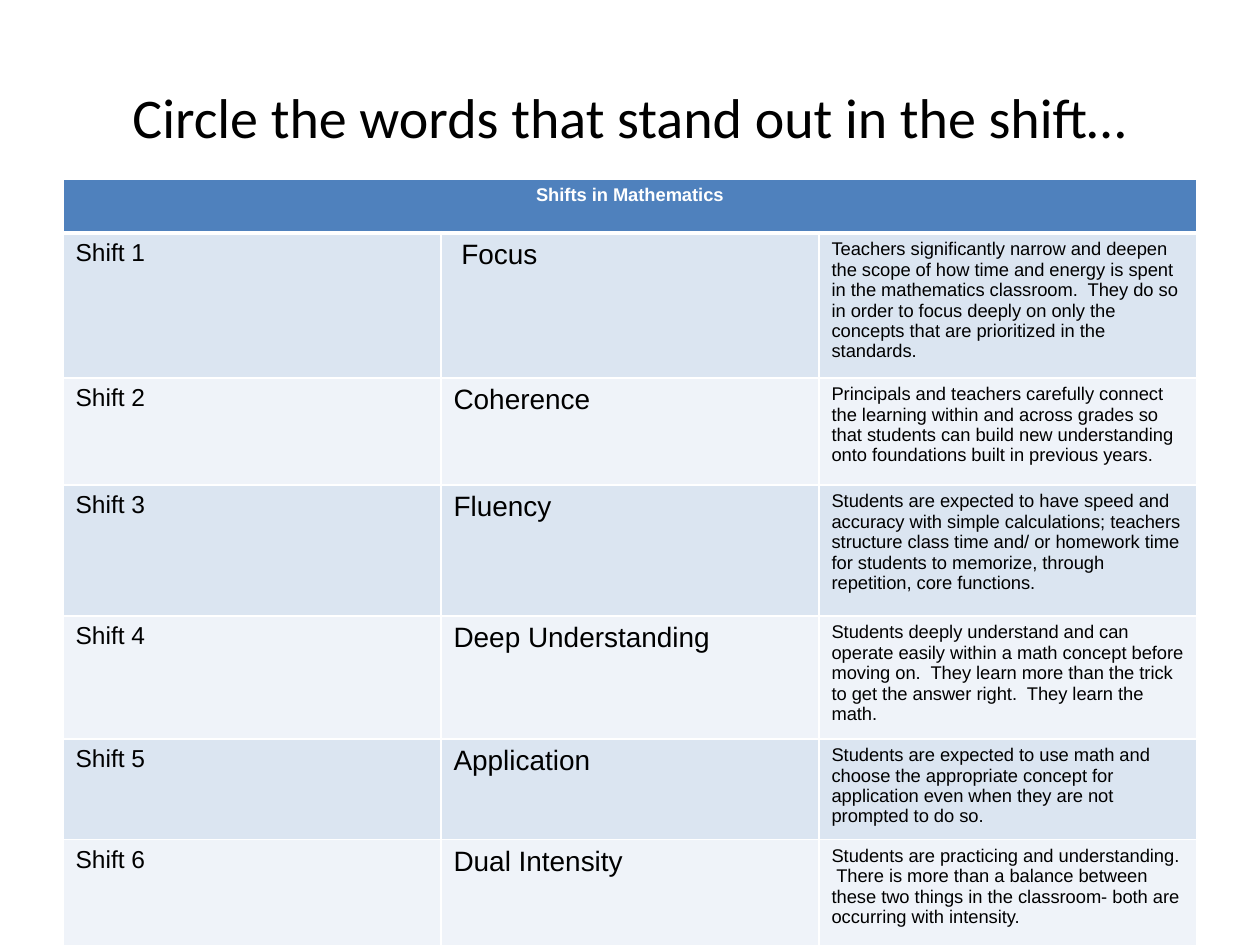
import pptx
import pptx.dml.color
import pptx.enum.text
import pptx.oxml
import pptx.oxml.ns
import pptx.util

Inches, Pt = pptx.util.Inches, pptx.util.Pt
RGBColor = pptx.dml.color.RGBColor
PP_ALIGN = pptx.enum.text.PP_ALIGN
MSO_ANCHOR = pptx.enum.text.MSO_ANCHOR

# Content
TITLE = "Circle the words that stand out in the shift…"
HEADER = "Shifts in Mathematics"
SHIFTS = [
    (" Focus", "Teachers significantly narrow and deepen the scope of how time and energy is "
     "spent in the mathematics classroom.  They do so in order to focus deeply on only the "
     "concepts that are prioritized in the standards."),
    ("Coherence", "Principals and teachers carefully connect the learning within and across "
     "grades so that students can build new understanding onto foundations built in "
     "previous years."),
    ("Fluency", "Students are expected to have speed and accuracy with simple calculations; "
     "teachers structure class time and/ or homework time for students to memorize, "
     "through repetition, core functions."),
    ("Deep Understanding", "Students deeply understand and can operate easily within a math "
     "concept before moving on.  They learn more than the trick to get the answer right.  "
     "They learn the math."),
    ("Application", "Students are expected to use math and choose the appropriate concept "
     "for application even when they are not prompted to do so."),
    ("Dual Intensity", "Students are practicing and understanding.  There is more than a "
     "balance between these two things in the classroom- both are occurring with intensity."),
]
ROW_HEIGHTS = [0.43, 1.04, 0.85, 1.04, 0.85, 0.66, 0.85]
COL_WIDTH = 3

# Colours and text formats
BLACK = RGBColor(0x00, 0x00, 0x00)
WHITE = RGBColor(0xFF, 0xFF, 0xFF)
BLUE = RGBColor(0x4F, 0x81, 0xBD)
BANDS = [RGBColor(0xDB, 0xE5, 0xF1), RGBColor(0xEF, 0xF3, 0xF9)]

TITLE_FONT = {"name": "Calibri", "size": Pt(32), "bold": False}
HEADER_FONT = {"name": "Arial", "size": Pt(10.5), "bold": True}
COL_FONTS = [{"name": "Arial", "size": Pt(size), "bold": False} for size in (14, 16, 10.5)]


def write(tf, text, font, color, align=PP_ALIGN.LEFT):
    p = tf.paragraphs[0]
    p.alignment = align
    r = p.add_run()
    r.text = text
    for name, value in font.items():
        setattr(r.font, name, value)
    r.font.color.rgb = color


def set_borders(cell, top=1, bottom=1):
    tc_pr = cell._tc.get_or_add_tcPr()
    widths = {"lnL": 1, "lnR": 1, "lnT": top, "lnB": bottom}
    for i, (tag, width) in enumerate(widths.items()):
        tc_pr.insert(i, pptx.oxml.parse_xml(
            f'<a:{tag} {pptx.oxml.ns.nsdecls("a")} w="{Pt(width)}">'
            f'<a:solidFill><a:srgbClr val="{WHITE}"/></a:solidFill></a:{tag}>'))


prs = pptx.Presentation()
prs.slide_width, prs.slide_height = Inches(10), Inches(7.5)
s = prs.slides.add_slide(prs.slide_layouts[6])

# Title
sp = s.shapes.add_textbox(Inches(0.5), Inches(0.3), Inches(9), Inches(1.25))
tf = sp.text_frame
tf.word_wrap = True
tf.vertical_anchor = MSO_ANCHOR.MIDDLE
write(tf, TITLE, TITLE_FONT, BLACK, PP_ALIGN.CENTER)

# Table grid
n_cols = len(COL_FONTS)
table = s.shapes.add_table(len(ROW_HEIGHTS), n_cols, Inches(0.5), Inches(1.42),
                           Inches(COL_WIDTH * n_cols), Inches(sum(ROW_HEIGHTS))).table
for col in table.columns:
    col.width = Inches(COL_WIDTH)
for row, height in zip(table.rows, ROW_HEIGHTS):
    row.height = Inches(height)

# Header row
for cell in table.rows[0].cells:
    cell.fill.solid()
    cell.fill.fore_color.rgb = BLUE
    set_borders(cell, bottom=3)
header = table.cell(0, 0)
header.merge(table.cell(0, n_cols - 1))
write(header.text_frame, HEADER, HEADER_FONT, WHITE, PP_ALIGN.CENTER)

# Shift rows
for i, shift in enumerate(SHIFTS, start=1):
    for j, text in enumerate((f"Shift {i}", *shift)):
        cell = table.cell(i, j)
        cell.fill.solid()
        cell.fill.fore_color.rgb = BANDS[(i - 1) % 2]
        set_borders(cell, top=3 if i == 1 else 1)
        write(cell.text_frame, text, COL_FONTS[j], BLACK)

prs.save("out.pptx")
